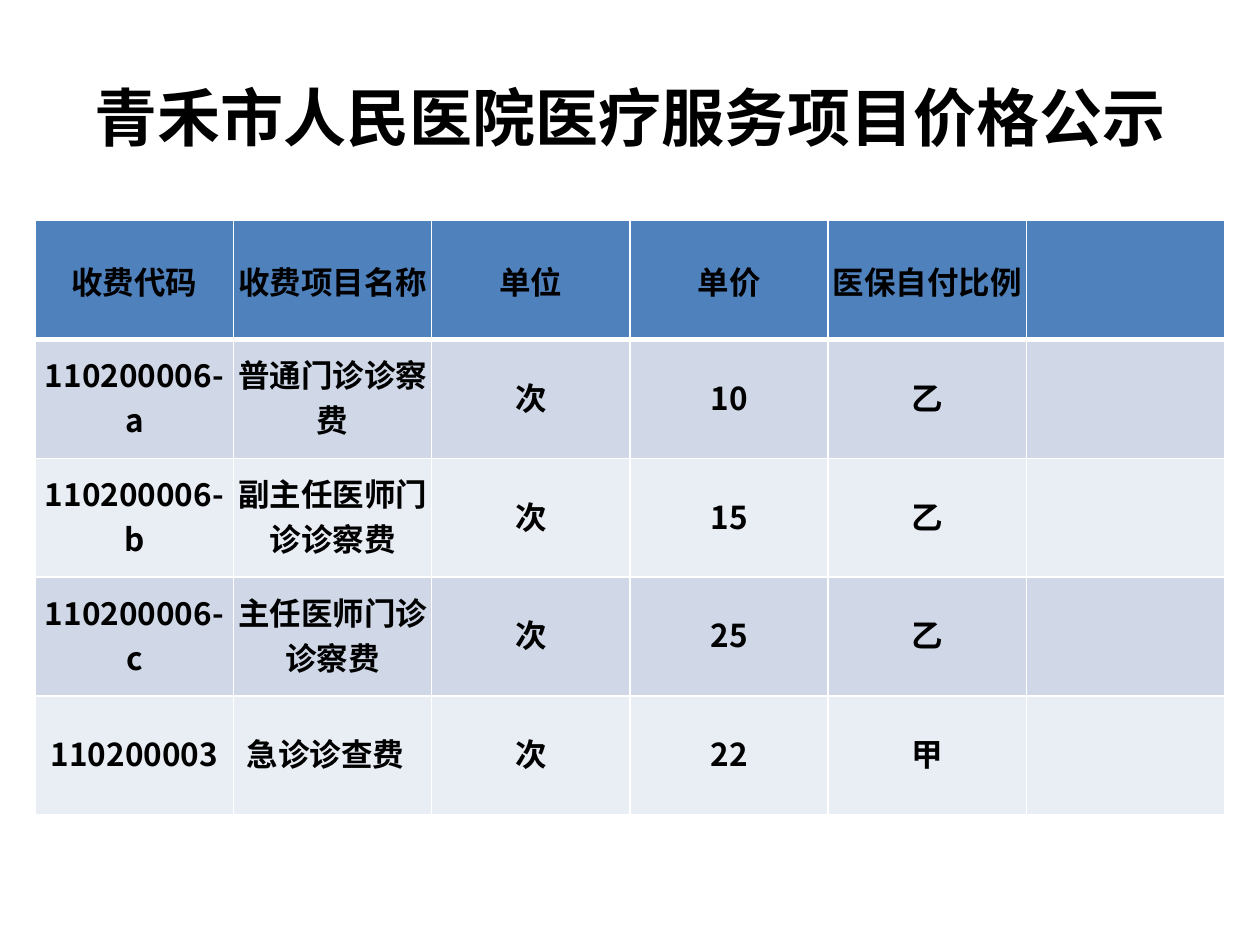
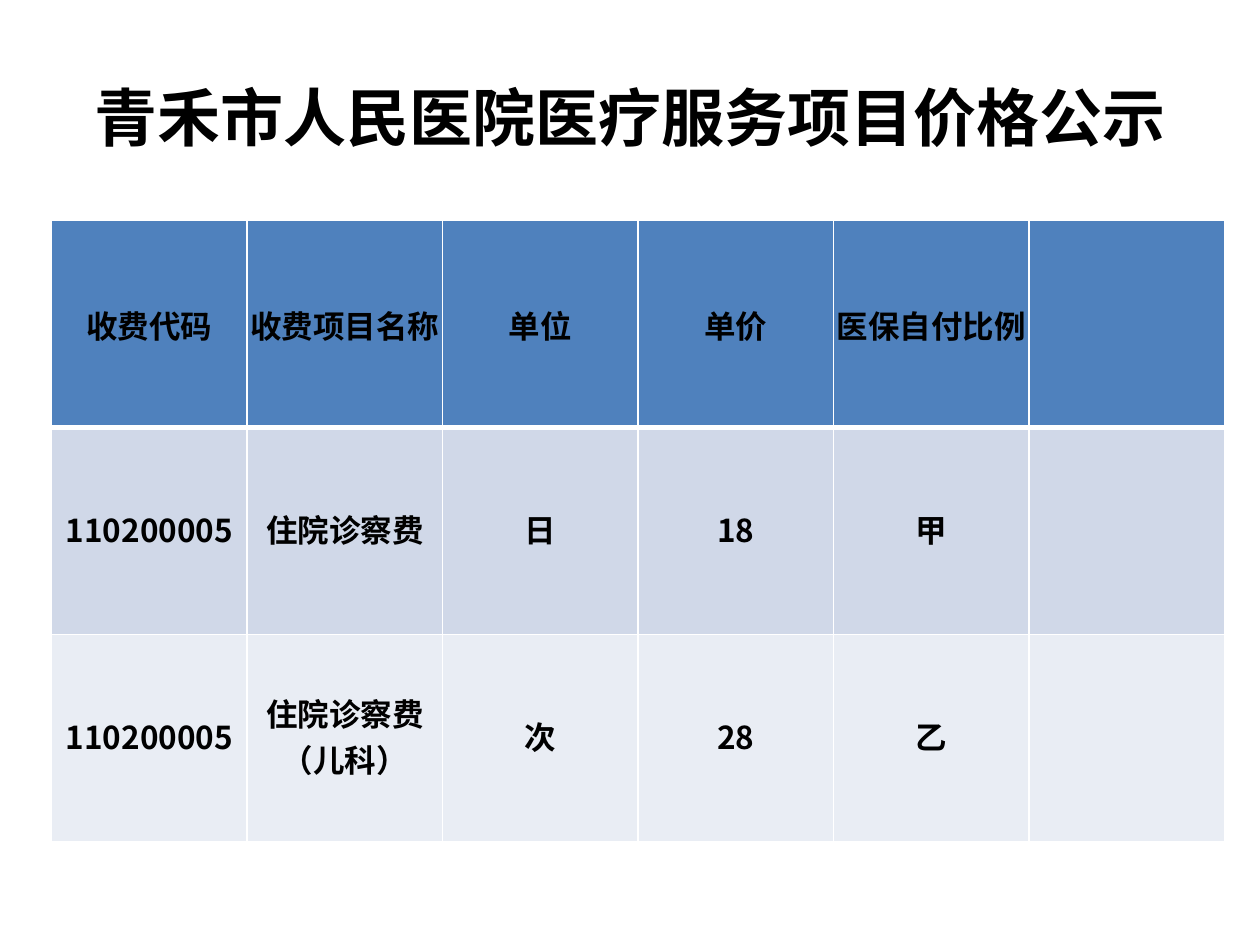
from dataclasses import dataclass

from lxml import etree
from pptx import Presentation
from pptx import util as u
from pptx.dml import color
from pptx.enum import text
from pptx.oxml import ns


@dataclass(frozen=True)
class Theme:
    ink: str = "000000"
    header: str = "4F81BD"
    bands: tuple[str, str] = ("D0D8E8", "E9EDF4")
    rule: str = "FFFFFF"
    latin: str = "Calibri"
    chinese: str = "Noto Sans CJK SC"
    title_size: float = 36
    cell_size: float = 18
    thin_rule: float = 1
    thick_rule: float = 3


@dataclass(frozen=True)
class PriceItem:
    code: str
    name: str
    unit: str
    price: str
    insurance: str
    remark: str = ""
    name_right_inset: float = 0.01

    def values(self) -> list[str]:
        return [self.code, self.name, self.unit, self.price, self.insurance, self.remark]


@dataclass(frozen=True)
class PriceList:
    left: float
    width: float
    height: float
    items: list[PriceItem]


THEME = Theme()
TITLE = "青禾市人民医院医疗服务项目价格公示"
TABLE_TOP = 1.75
HEADER = PriceItem("收费代码", "收费项目名称", "单位", "单价", "医保自付比例")
PRICE_LISTS = [
    PriceList(0.28, 9.44, 4.72, [
        PriceItem("110200006-a", "普通门诊诊察费", "次", "10", "乙"),
        PriceItem("110200006-b", "副主任医师门诊诊察费", "次", "15", "乙"),
        PriceItem("110200006-c", "主任医师门诊诊察费", "次", "25", "乙"),
        PriceItem("110200003", "急诊诊查费", "次", "22", "甲", name_right_inset=0.12),
    ]),
    PriceList(0.41, 9.31, 4.93, [
        PriceItem("110200005", "住院诊察费", "日", "18", "甲"),
        PriceItem("110200005", "住院诊察费（儿科）", "次", "28", "乙"),
    ]),
]


def write_text(frame, content: str, *, size: float, font: str) -> None:
    frame.word_wrap = True
    paragraph = frame.paragraphs[0]
    paragraph.alignment = text.PP_ALIGN.CENTER
    run = paragraph.add_run()
    run.text = content
    run.font.size = u.Pt(size)
    run.font.bold = True
    run.font.name = font
    run.font.color.rgb = color.RGBColor.from_string(THEME.ink)
    east_asian = etree.SubElement(run.font._element, ns.qn("a:ea"))
    east_asian.set("typeface", THEME.chinese)


def set_borders(cell, *, top: float, bottom: float) -> None:
    properties = cell._tc.get_or_add_tcPr()
    widths = {"lnL": THEME.thin_rule, "lnR": THEME.thin_rule, "lnT": top, "lnB": bottom}
    for position, (side, width) in enumerate(widths.items()):
        line = etree.Element(ns.qn(f"a:{side}"), w=str(u.Pt(width)))
        fill = etree.SubElement(line, ns.qn("a:solidFill"))
        etree.SubElement(fill, ns.qn("a:srgbClr"), val=THEME.rule)
        properties.insert(position, line)


def add_title(slide) -> None:
    box = slide.shapes.add_textbox(u.Inches(0.5), u.Inches(0.3), u.Inches(9), u.Inches(1.25))
    box.text_frame.vertical_anchor = text.MSO_ANCHOR.MIDDLE
    write_text(box.text_frame, TITLE, size=THEME.title_size, font=THEME.latin)


def fill_row(table, row: int, item: PriceItem) -> None:
    is_header = row == 0
    fill = THEME.header if is_header else THEME.bands[(row - 1) % 2]
    for column, value in enumerate(item.values()):
        cell = table.cell(row, column)
        cell.fill.solid()
        cell.fill.fore_color.rgb = color.RGBColor.from_string(fill)
        cell.vertical_anchor = text.MSO_ANCHOR.MIDDLE
        cell.margin_left = u.Inches(0.02 if column == 0 else 0.01)
        cell.margin_top = u.Inches(0.01)
        cell.margin_right = u.Inches(
            {0: 0.02, 1: item.name_right_inset}.get(column, 0.01)
        )
        cell.margin_bottom = u.Inches(0 if is_header else 0.05)
        set_borders(
            cell,
            top=THEME.thick_rule if row == 1 else THEME.thin_rule,
            bottom=THEME.thick_rule if is_header else THEME.thin_rule,
        )
        if value:
            write_text(cell.text_frame, value, size=THEME.cell_size, font=THEME.chinese)


def add_price_table(slide, prices: PriceList) -> None:
    rows = [HEADER, *prices.items]
    table = slide.shapes.add_table(
        len(rows), len(HEADER.values()), u.Inches(prices.left), u.Inches(TABLE_TOP),
        u.Inches(prices.width), u.Inches(prices.height),
    ).table
    for row, item in enumerate(rows):
        fill_row(table, row, item)


def main() -> None:
    presentation = Presentation()
    presentation.slide_width = u.Inches(10)
    presentation.slide_height = u.Inches(7.5)
    for prices in PRICE_LISTS:
        slide = presentation.slides.add_slide(presentation.slide_layouts[6])
        add_title(slide)
        add_price_table(slide, prices)
    presentation.save("out.pptx")


if __name__ == "__main__":
    main()
